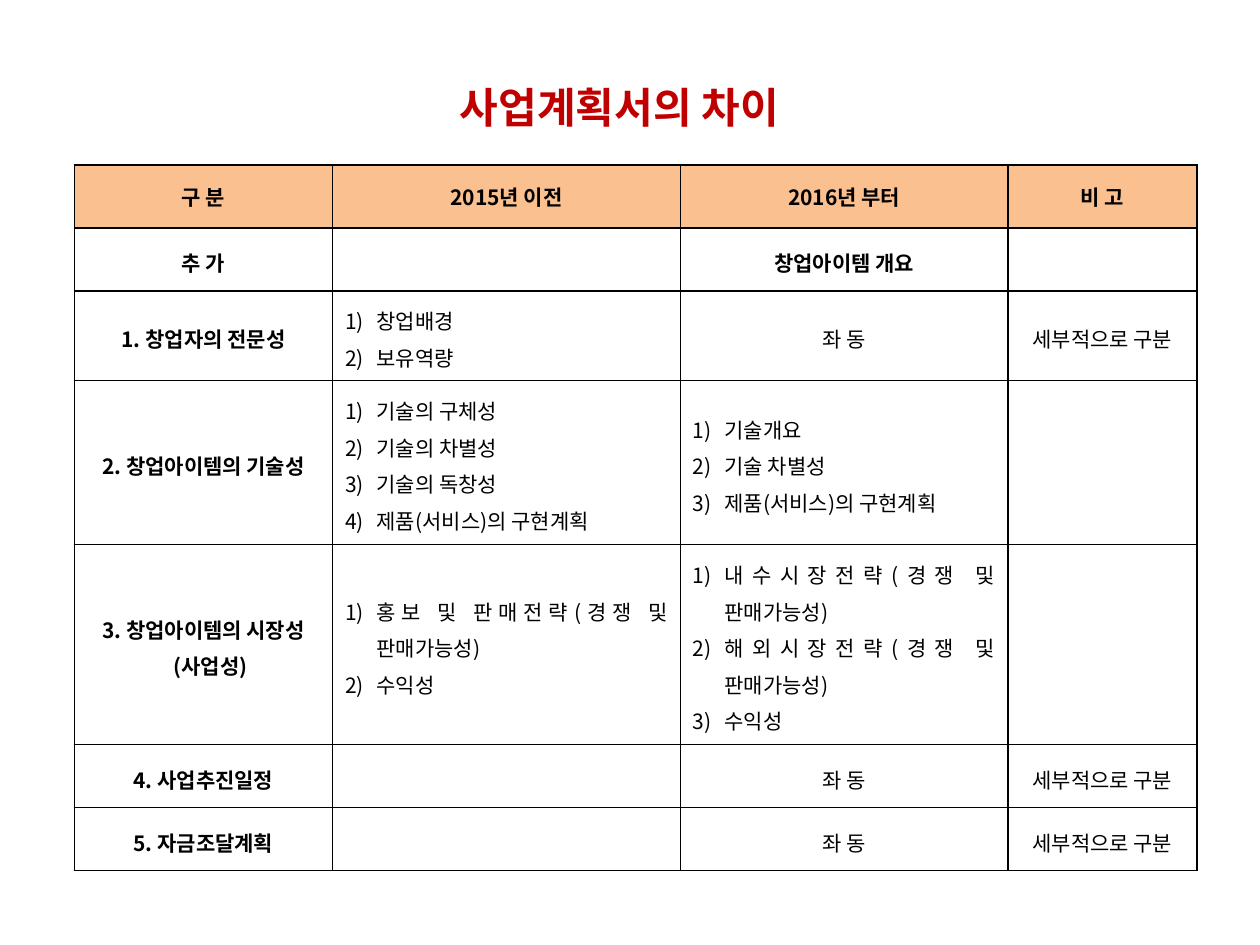
from lxml.etree import SubElement
from pptx import Presentation
from pptx.dml.color import RGBColor
from pptx.enum.text import MSO_ANCHOR, MSO_AUTO_SIZE, PP_ALIGN
from pptx.oxml import parse_xml
from pptx.oxml.ns import nsdecls, qn
from pptx.util import Inches, Pt

RED = RGBColor(0xC0, 0x00, 0x00)
BLACK = RGBColor(0x00, 0x00, 0x00)
PEACH = RGBColor(0xFA, 0xC0, 0x90)
FONT = "Noto Sans CJK KR"

COLS = [2.05, 2.76, 2.6, 1.5]
ROWS = [0.5, 0.5, 0.71, 1.3, 1.59, 0.5, 0.5]
SAME, SPLIT = "좌 동", "세부적으로 구분"
# A string is centred; a list is numbered.
CELLS = [
    ["구 분", "2015년 이전", "2016년 부터", "비 고"],
    ["추 가", "", "창업아이템 개요", ""],
    ["1. 창업자의 전문성", ["창업배경", "보유역량"], SAME, SPLIT],
    ["2. 창업아이템의 기술성",
     ["기술의 구체성", "기술의 차별성", "기술의 독창성", "제품(서비스)의 구현계획"],
     ["기술개요", "기술 차별성", "제품(서비스)의 구현계획"], ""],
    ["3. 창업아이템의 시장성\n(사업성)",
     ["홍보 및 판매전략(경쟁 및 판매가능성)", "수익성"],
     ["내수시장전략(경쟁 및 판매가능성)", "해외시장전략(경쟁 및 판매가능성)", "수익성"], ""],
    ["4. 사업추진일정", "", SAME, SPLIT],
    ["5. 자금조달계획", "", SAME, SPLIT],
]


def write(frame, lines, size=12, color=BLACK, bold=False, space=None, number=False):
    for i, line in enumerate(lines):
        para = frame.paragraphs[0] if i == 0 else frame.add_paragraph()
        para.alignment = PP_ALIGN.JUSTIFY if number else PP_ALIGN.CENTER
        para.line_spacing = space
        props = para._p.get_or_add_pPr()
        if number:
            props.set("marL", str(Inches(0.25)))
            props.set("indent", str(Inches(-0.25)))
            SubElement(props, qn("a:buFont"), typeface="+mj-lt")
            SubElement(props, qn("a:buAutoNum"), type="arabicParenR")
        elif i:
            props.set("marL", str(Inches(0.11)))
        run = para.add_run()
        run.text = line
        font = run.font
        font.name, font.size, font.bold = FONT, Pt(size), bold
        font.color.rgb = color
        SubElement(font._element, qn("a:ea"), typeface=FONT)


def frame_cell(cell):
    """Draw a thin black line on all four sides."""
    props = cell._tc.get_or_add_tcPr()
    for i, side in enumerate("LRTB"):
        props.insert(i, parse_xml(
            f'<a:ln{side} {nsdecls("a")} w="{Pt(1)}"><a:solidFill>'
            f'<a:srgbClr val="{BLACK}"/></a:solidFill></a:ln{side}>'))


deck = Presentation()
deck.slide_width, deck.slide_height = Inches(10), Inches(7.5)
slide = deck.slides.add_slide(deck.slide_layouts[5])

title = slide.shapes.title
title.left, title.top = Inches(2.24), Inches(0.6)
title.width, title.height = Inches(5.35), Inches(0.5)
head = title.text_frame
head.auto_size = MSO_AUTO_SIZE.NONE
head.vertical_anchor = MSO_ANCHOR.TOP
write(head, ["사업계획서의 차이"], size=24, color=RED, bold=True)

table = slide.shapes.add_table(len(ROWS), len(COLS), Inches(0.59), Inches(1.31),
                               Inches(sum(COLS)), Inches(sum(ROWS))).table
for col, width in zip(table.columns, COLS):
    col.width = Inches(width)
for row, height in zip(table.rows, ROWS):
    row.height = Inches(height)

for r, line in enumerate(CELLS):
    for c, text in enumerate(line):
        cell = table.cell(r, c)
        cell.vertical_anchor = MSO_ANCHOR.MIDDLE
        if r == 0:
            cell.fill.solid()
            cell.fill.fore_color.rgb = PEACH
        else:
            cell.fill.background()
        frame_cell(cell)
        if text:
            listed = isinstance(text, list)
            write(cell.text_frame, text if listed else text.split("\n"),
                  bold=r < 2 or c == 0, space=1.2 if r else None, number=listed)

deck.save("out.pptx")
